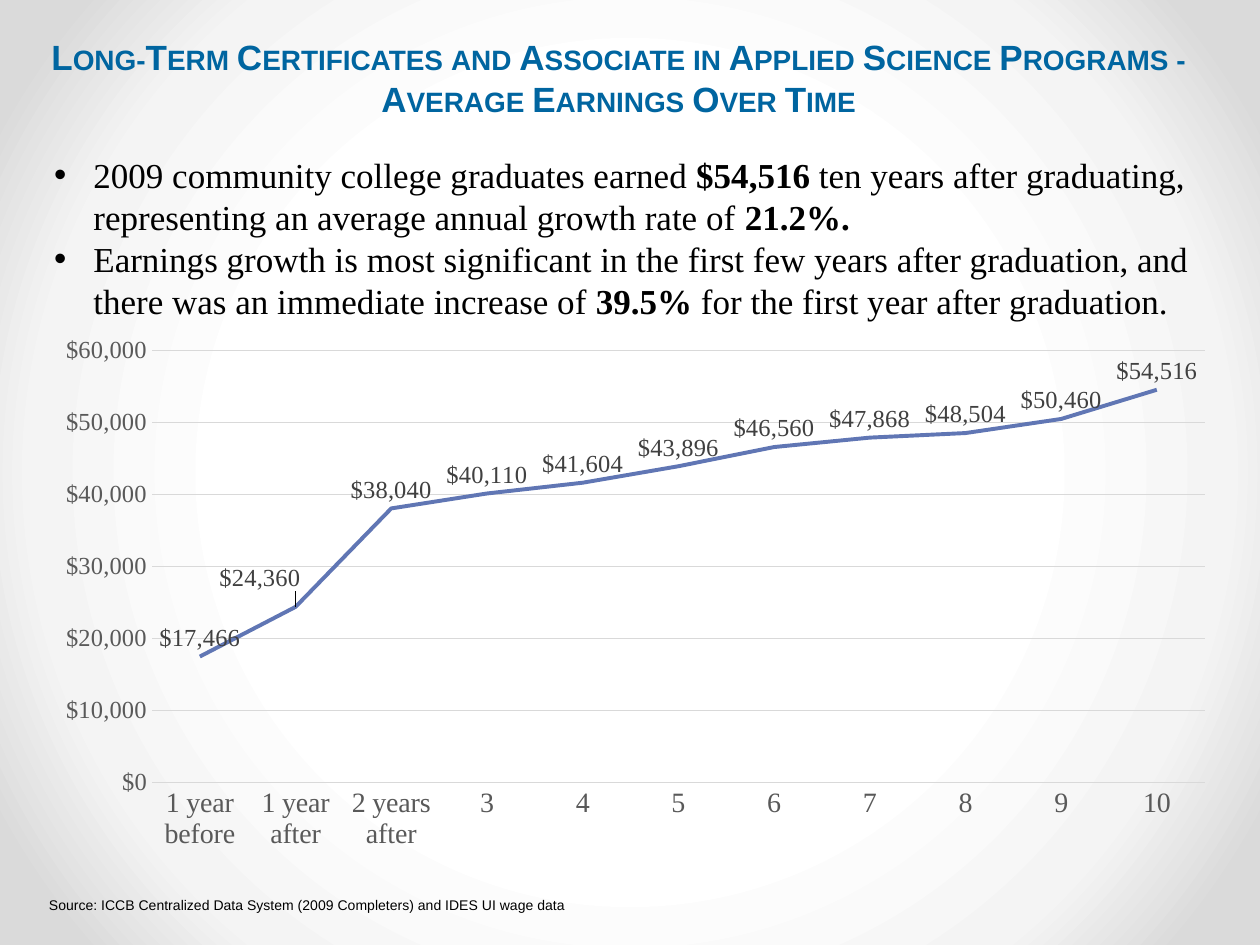
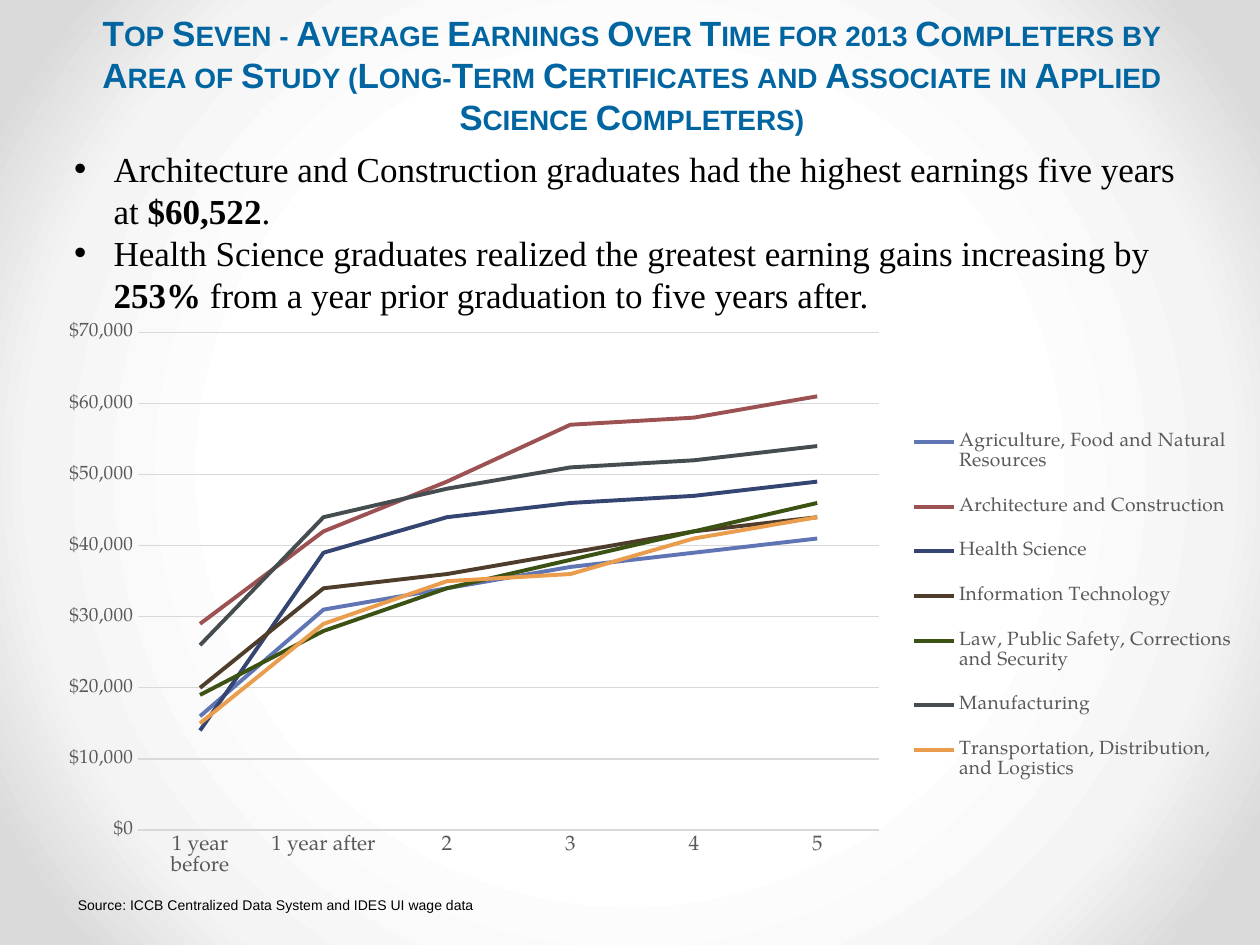
from dataclasses import dataclass

from pptx import Presentation
from pptx import util as u
from pptx.chart.data import CategoryChartData
from pptx.dml.color import RGBColor
from pptx.enum import chart as charts, text
from pptx.oxml import ns, parse_xml

DOLLARS = '"$"#,##0'
SERIF, SANS, CHART_FACE = "Times New Roman", "Arial", "TeX Gyre Pagella"


@dataclass(frozen=True)
class Theme:
    heading: str = "0065A0"
    ink: str = "000000"
    axis_text: str = "595959"
    label_text: str = "404040"
    grid: str = "D9D9D9"
    backdrop: tuple = ((50, "FFFFFF"), (76, "F4F4F4"), (92, "DADADA"))
    lines: tuple = ("6076B4", "9C5252", "354571", "4F3D2B",
                    "3B5213", "464D50", "EB9D4E")
    text_size: int = 20
    line_pitch: int = 24
    source_size: int = 8
    label_size: int = 14
    bullet_indent: float = 22.5


def set_all(target, **values):
    for name, value in values.items():
        setattr(target, name, value)


def style_font(font, size, face, colour, bold=False):
    set_all(font, size=u.Pt(size), name=face, bold=bold)
    font.color.rgb = RGBColor.from_string(colour)


def style_line(line, colour, width):
    line.width = u.Pt(width)
    line.color.rgb = RGBColor.from_string(colour)


def set_layout(element, index, **values):
    """Give a chart part a manual layout, as its child number index."""
    for old in element.findall(ns.qn("c:layout")):
        element.remove(old)
    entries = "".join(f'<c:{tag} val="{value}"/>' for tag, value in values.items())
    element.insert(index, parse_xml(
        f'<c:layout {ns.nsdecls("c")}><c:manualLayout>{entries}'
        "</c:manualLayout></c:layout>"))


def frame_layout(left, top, width, height):
    return dict(xMode="edge", yMode="edge", x=left, y=top, w=width, h=height)


class Deck:
    def __init__(self, theme):
        self.theme = theme
        self.deck = Presentation()
        set_all(self.deck, slide_width=u.Pt(720), slide_height=u.Pt(540))
        self.slide = None
        self.paint_backdrop()

    def paint_backdrop(self):
        master = self.deck.slide_master
        master.background.fill.solid()
        plain = next(master.element.iter(ns.qn("p:bgPr")))[0]
        stops = "".join(
            f'<a:gs pos="{place * 1000}"><a:srgbClr val="{colour}"/></a:gs>'
            for place, colour in self.theme.backdrop)
        plain.getparent().replace(plain, parse_xml(
            f'<a:gradFill {ns.nsdecls("a")} rotWithShape="1"><a:gsLst>{stops}</a:gsLst>'
            '<a:path path="circle"><a:fillToRect l="50000" t="50000" r="50000" '
            'b="50000"/></a:path></a:gradFill>'))

    def add_slide(self, heading, box):
        self.slide = self.deck.slides.add_slide(self.deck.slide_layouts[5])
        title = self.slide.shapes.title
        for side, value in zip(("left", "top", "width", "height"), box):
            setattr(title, side, u.Pt(value))
        title.text_frame.text = heading
        set_all(title.text_frame, word_wrap=True, auto_size=text.MSO_AUTO_SIZE.NONE,
                vertical_anchor=text.MSO_ANCHOR.BOTTOM)
        paragraph = title.text_frame.paragraphs[0]
        set_all(paragraph, alignment=text.PP_ALIGN.CENTER,
                line_spacing=u.Pt(self.theme.line_pitch))
        style_font(paragraph.runs[0].font, self.theme.text_size, SANS,
                   self.theme.heading, True)
        for properties in title.element.iter(ns.qn("a:rPr")):
            properties.set("cap", "small")

    def text_box(self, box):
        shape = self.slide.shapes.add_textbox(*map(u.Pt, box))
        set_all(shape.text_frame, word_wrap=True,
                auto_size=text.MSO_AUTO_SIZE.SHAPE_TO_FIT_TEXT)
        return shape

    def bullets(self, box, findings):
        """Write findings, lists of pieces in which every second piece is bold."""
        shape = self.text_box(box)
        frame = shape.text_frame
        for number, pieces in enumerate(findings):
            paragraph = frame.add_paragraph() if number else frame.paragraphs[0]
            paragraph.line_spacing = u.Pt(self.theme.line_pitch)
            for position, piece in enumerate(pieces):
                run = paragraph.add_run()
                run.text = piece
                style_font(run.font, self.theme.text_size, SERIF, self.theme.ink,
                           position % 2 == 1)
        indent = u.Pt(self.theme.bullet_indent)
        for properties in shape.element.iter(ns.qn("a:pPr")):
            properties.set("marL", str(indent))
            properties.set("indent", str(-indent))
            for bullet in ('buFont {} typeface="Arial"', 'buChar {} char="•"'):
                properties.append(parse_xml(f'<a:{bullet.format(ns.nsdecls("a"))}/>'))

    def source(self, left, wording):
        frame = self.text_box((left, 509, 515.5, 17.3)).text_frame
        frame.text = wording
        style_font(frame.paragraphs[0].runs[0].font, self.theme.source_size, SANS,
                   self.theme.ink)

    def line_chart(self, box, years, earnings, top_value, plot, face, year_size,
                   dollar_size):
        data = CategoryChartData(number_format=DOLLARS)
        data.categories = years
        for name, values in earnings.items():
            data.add_series(name, values)
        chart = self.slide.shapes.add_chart(
            charts.XL_CHART_TYPE.LINE, *map(u.Pt, box), data).chart
        set_all(chart, has_title=False, has_legend=False)
        style_font(chart.font, 10, CHART_FACE, self.theme.ink)
        chart.plots[0].vary_by_categories = False
        for series, colour in zip(chart.plots[0].series, self.theme.lines):
            series.smooth = False
            style_line(series.format.line, colour, 2.25)

        no_tick = charts.XL_TICK_MARK.NONE
        for axis, size in ((chart.category_axis, year_size),
                           (chart.value_axis, dollar_size)):
            set_all(axis, major_tick_mark=no_tick, minor_tick_mark=no_tick)
            style_font(axis.tick_labels.font, size, face, self.theme.axis_text)
        style_line(chart.category_axis.format.line, self.theme.grid, 0.75)
        dollars = chart.value_axis
        set_all(dollars, minimum_scale=0, maximum_scale=top_value, major_unit=10000,
                has_major_gridlines=True)
        set_all(dollars.tick_labels, number_format=DOLLARS,
                number_format_is_linked=False)
        dollars.format.line.fill.background()
        style_line(dollars.major_gridlines.format.line, self.theme.grid, 0.75)
        set_layout(next(chart.element.iter(ns.qn("c:plotArea"))), 0,
                   layoutTarget="inner", **frame_layout(*plot))
        return chart

    def value_labels(self, chart, moved_point, shift):
        """Label each point above the line, and shift one label clear of it."""
        series = chart.plots[0].series[0]
        above = charts.XL_LABEL_POSITION.ABOVE
        every, moved = series.data_labels, series.points[moved_point].data_label
        set_all(every, show_value=True, number_format=DOLLARS,
                number_format_is_linked=False)
        for labels in (every, moved):
            labels.position = above
            style_font(labels.font, self.theme.label_size, SERIF, self.theme.label_text)
        label = next(chart.element.iter(ns.qn("c:dLbl")))
        label.insert(1, parse_xml(f'<c:numFmt {ns.nsdecls("c")} sourceLinked="0" '
                                  "formatCode='\"$\"#,##0'/>"))
        set_layout(label, 1, x=shift[0], y=shift[1])

    def legend(self, chart, place):
        chart.has_legend = True
        set_all(chart.legend, position=charts.XL_LEGEND_POSITION.RIGHT,
                include_in_layout=False)
        style_font(chart.legend.font, 11, CHART_FACE, self.theme.axis_text)
        set_layout(next(chart.element.iter(ns.qn("c:legend"))), 1,
                   **frame_layout(*place))


def earnings_over_time(deck):
    deck.add_slide("Long-Term Certificates and Associate in Applied Science Programs - "
                   "Average Earnings Over Time", (10.8, 12.2, 685.4, 59.8))
    chart = deck.line_chart(
        (23.8, 185.8, 678.2, 306),
        ["1 year before", "1 year after", "2 years after", *map(str, range(3, 11))],
        {"Series 1": (17466, 24360, 38040, 40110, 41604, 43896, 46560, 47868,
                      48504, 50460, 54516)},
        60000, (0.093, 0.047, 0.887, 0.807), SERIF, 16, 14)
    deck.value_labels(chart, 1, (-0.03, -0.02))
    deck.bullets((23.8, 84.2, 671.8, 126), [
        ["2009 community college graduates earned ", "$54,516 ",
         "ten years after graduating, representing an average annual growth rate of ",
         "21.2%."],
        ["Earnings growth is most significant in the first few years after graduation, "
         "and there was an immediate increase of ", "39.5%",
         " for the first year after graduation."]])
    deck.source(20.9, "Source: ICCB Centralized Data System (2009 Completers) and "
                      "IDES UI wage data")


def earnings_by_area(deck):
    deck.add_slide("Top Seven - Average Earnings Over Time for 2013 Completers by Area "
                   "of Study (Long-Term Certificates and Associate in Applied Science "
                   "Completers)", (37.4, 22.3, 647.3, 59.8))
    thousands = {
        "Agriculture, Food and Natural Resources": (16, 31, 34, 37, 39, 41),
        "Architecture and Construction": (29, 42, 49, 57, 58, 61),
        "Health Science": (14, 39, 44, 46, 47, 49),
        "Information Technology": (20, 34, 36, 39, 42, 44),
        "Law, Public Safety, Corrections and Security": (19, 28, 34, 38, 42, 46),
        "Manufacturing": (26, 44, 48, 51, 52, 54),
        "Transportation, Distribution, and Logistics": (15, 29, 35, 36, 41, 44),
    }
    chart = deck.line_chart(
        (12.2, 184.3, 696.2, 316.8),
        ["1 year before", "1 year after", *map(str, range(2, 6))],
        {area: [value * 1000 for value in values] for area, values in thousands.items()},
        70000, (0.096, 0.014, 0.608, 0.902), CHART_FACE, 12, 11)
    deck.legend(chart, (0.73, 0.15, 0.27, 0.72))
    deck.bullets((35.3, 80.6, 647.3, 104.4), [
        ["Architecture and Construction graduates had the highest earnings five years "
         "at ", "$60,522", "."],
        ["Health Science graduates realized the greatest earning gains increasing by ",
         "253%", " from a year prior graduation to five years after."]])
    deck.source(37.4, "Source: ICCB Centralized Data System and IDES UI wage data")


def main():
    deck = Deck(Theme())
    earnings_over_time(deck)
    earnings_by_area(deck)
    deck.deck.save("out.pptx")


if __name__ == "__main__":
    main()
